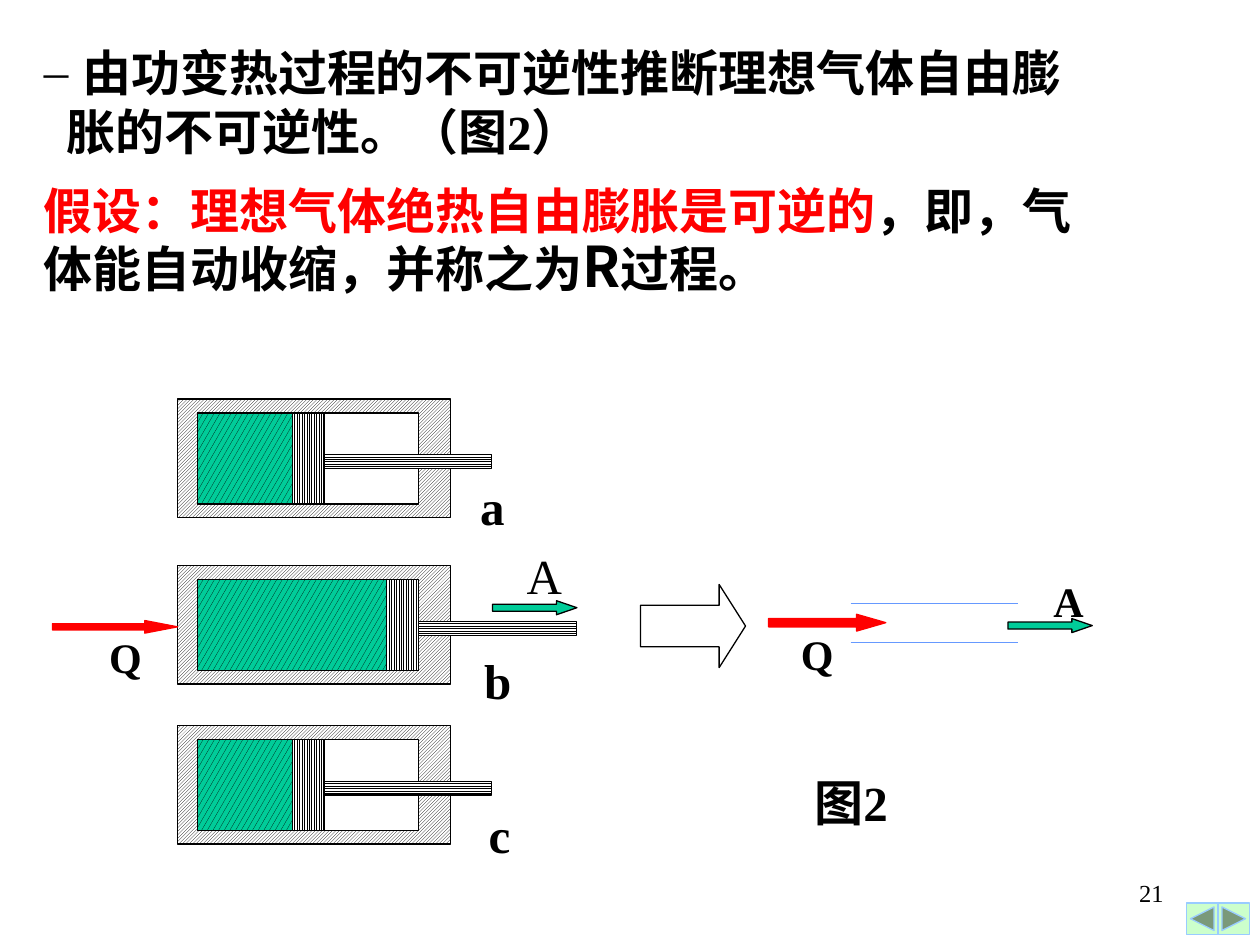
"""Build the slide on the irreversibility of free expansion with its cylinder diagram."""
from lxml import etree
from pptx import Presentation
from pptx.dml.color import RGBColor
from pptx.enum.dml import MSO_PATTERN
from pptx.enum.shapes import MSO_CONNECTOR, MSO_SHAPE
from pptx.enum.text import MSO_ANCHOR, PP_ALIGN
from pptx.oxml.ns import qn
from pptx.util import Pt

RECTANGLE = MSO_SHAPE.RECTANGLE
RIGHT_ARROW = MSO_SHAPE.RIGHT_ARROW
NEXT_BUTTON = MSO_SHAPE.ACTION_BUTTON_FORWARD_OR_NEXT
BACK_BUTTON = MSO_SHAPE.ACTION_BUTTON_BACK_OR_PREVIOUS
WALL_PATTERN = MSO_PATTERN.DARK_UPWARD_DIAGONAL
ROD_PATTERN = MSO_PATTERN.NARROW_HORIZONTAL
PISTON_PATTERN = MSO_PATTERN.NARROW_VERTICAL
GAS_PATTERN = MSO_PATTERN.LARGE_CONFETTI
LEFT, CENTER, RIGHT = PP_ALIGN.LEFT, PP_ALIGN.CENTER, PP_ALIGN.RIGHT
TOP, MIDDLE = MSO_ANCHOR.TOP, MSO_ANCHOR.MIDDLE

SERIF, SANS = "Times New Roman", "Noto Sans CJK SC"
BLACK, WHITE, RED, GREEN = "000000", "FFFFFF", "FF0000", "00CC99"
LINE_HEIGHT = 33.5

presentation = Presentation()
presentation.slide_width, presentation.slide_height = Pt(720), Pt(540)
slide = presentation.slides.add_slide(presentation.slide_layouts[6])


def add_shape(kind, left, top, width, height, fill=WHITE, line=BLACK, pattern=None, head=None):
    shape = slide.shapes.add_shape(kind, Pt(left), Pt(top), Pt(width), Pt(height))
    shape.shadow.inherit = False
    if pattern is None:
        shape.fill.solid()
        shape.fill.fore_color.rgb = RGBColor.from_string(fill)
    else:
        shape.fill.patterned()
        shape.fill.pattern = pattern
        shape.fill.fore_color.rgb = RGBColor.from_string(BLACK)
        shape.fill.back_color.rgb = RGBColor.from_string(fill)
    shape.line.color.rgb = RGBColor.from_string(line)
    shape.line.width = Pt(0.75)
    if head is not None:
        shape.adjustments[1] = head


def add_text(left, top, width, height, *paragraphs, font=SERIF, size=28, bold=True,
             align=CENTER, anchor=MIDDLE, line_height=None):
    frame = slide.shapes.add_textbox(Pt(left), Pt(top), Pt(width), Pt(height)).text_frame
    frame.word_wrap = True
    frame.vertical_anchor = anchor
    for index, runs in enumerate(paragraphs):
        paragraph = frame.add_paragraph() if index else frame.paragraphs[0]
        paragraph.alignment = align
        if line_height:
            paragraph.line_spacing = Pt(line_height)
        for text, color, run_size in runs:
            run = paragraph.add_run()
            run.text = text
            run.font.name = font
            run.font.size = Pt(run_size or size)
            run.font.bold = bold
            run.font.color.rgb = RGBColor.from_string(color)
            etree.SubElement(run.font._element, qn("a:ea"), typeface=SANS)
    return frame


for kind, left in ((NEXT_BUTTON, 696), (BACK_BUTTON, 678)):
    add_shape(kind, left, 516, 18, 18, fill="CCFFCC", line="99CCFF")
add_text(522, 498, 150, 36, [("21", BLACK, None)], size=14, bold=False, align=RIGHT, anchor=TOP)

statement = add_text(
    18, 21, 669, 74,
    [("由功变热过程的不可逆性推断理想气体自由膨", BLACK, None)],
    [("胀的不可逆性。（图2）", BLACK, None)],
    align=LEFT, line_height=LINE_HEIGHT)
for paragraph, margin, indent in zip(statement.paragraphs, (22, 13), (-22, 0)):
    properties = paragraph._p.get_or_add_pPr()
    properties.set("marL", str(Pt(margin)))
    properties.set("indent", str(Pt(indent)))
first_properties = statement.paragraphs[0]._p.get_or_add_pPr()
etree.SubElement(first_properties, qn("a:buFont"), typeface=SERIF)
etree.SubElement(first_properties, qn("a:buChar"), char="–")

add_text(
    18, 101, 612, 72,
    [("假设：理想气体绝热自由膨胀是可逆的", RED, None),
     ("，即，气体能自动收缩，并称之为", BLACK, None),
     ("R", BLACK, 32),
     ("过程。", BLACK, None)],
    font=SANS, align=LEFT, line_height=LINE_HEIGHT)

add_shape(RIGHT_ARROW, 366, 334, 60, 47.5, head=0.317)
for height in (367, 345):
    guide = slide.shapes.add_connector(MSO_CONNECTOR.STRAIGHT, Pt(486), Pt(height), Pt(582), Pt(height))
    guide.line.color.rgb = RGBColor.from_string("6699FF")
    guide.line.width = Pt(0.75)
    etree.SubElement(guide._element.spPr, qn("a:effectLst"))

chamber_width, piston_width = 126, 18
for cylinder_top, gas_width, piston_left, rod_left in (
        (228, 54, 167, 185), (414.7, 54, 167, 185), (323.3, chamber_width, 221, 233.5)):
    chamber_top = cylinder_top + 8
    add_shape(RECTANGLE, 101.5, cylinder_top, 156, 67.7, pattern=WALL_PATTERN)
    if gas_width < chamber_width:
        add_shape(RECTANGLE, 113, chamber_top, chamber_width, 52)
    add_shape(RECTANGLE, 113, chamber_top, gas_width, 52, fill=GREEN, pattern=GAS_PATTERN)
    add_shape(RECTANGLE, rod_left, cylinder_top + 31.7, 96, 8, pattern=ROD_PATTERN)
    add_shape(RECTANGLE, piston_left, chamber_top, piston_width, 52, pattern=PISTON_PATTERN)

for left, top, width, height, head in ((439.2, 351, 67, 9.6, 1.737), (30, 354.6, 71.5, 7.2, 2.595)):
    add_shape(RIGHT_ARROW, left, top, width, height, fill=RED, line=RED, head=head)
for left, top in ((576, 353.5), (281.5, 343.3)):
    add_shape(RIGHT_ARROW, left, top, 48.2, 8, fill=GREEN, head=1.455)

for text, left, top, width, height, size, bold in (
        ("Q", 437.8, 355.7, 58.3, 36, 24, True),
        ("A", 589, 325.4, 43.2, 36, 24, True),
        ("Q", 36, 357, 71.3, 36, 24, True),
        ("A", 293.8, 308.2, 19.4, 41, 28, False),
        ("a", 267, 268.6, 28.8, 41, 28, True),
        ("b", 269.3, 368, 30.2, 41, 28, True),
        ("c", 272.2, 455.8, 26.6, 41, 28, True)):
    add_text(left, top, width, height, [(text, BLACK, None)], size=size, bold=bold)
add_text(458, 438, 56.9, 41, [("图2", BLACK, None)], line_height=LINE_HEIGHT)

presentation.save("out.pptx")
